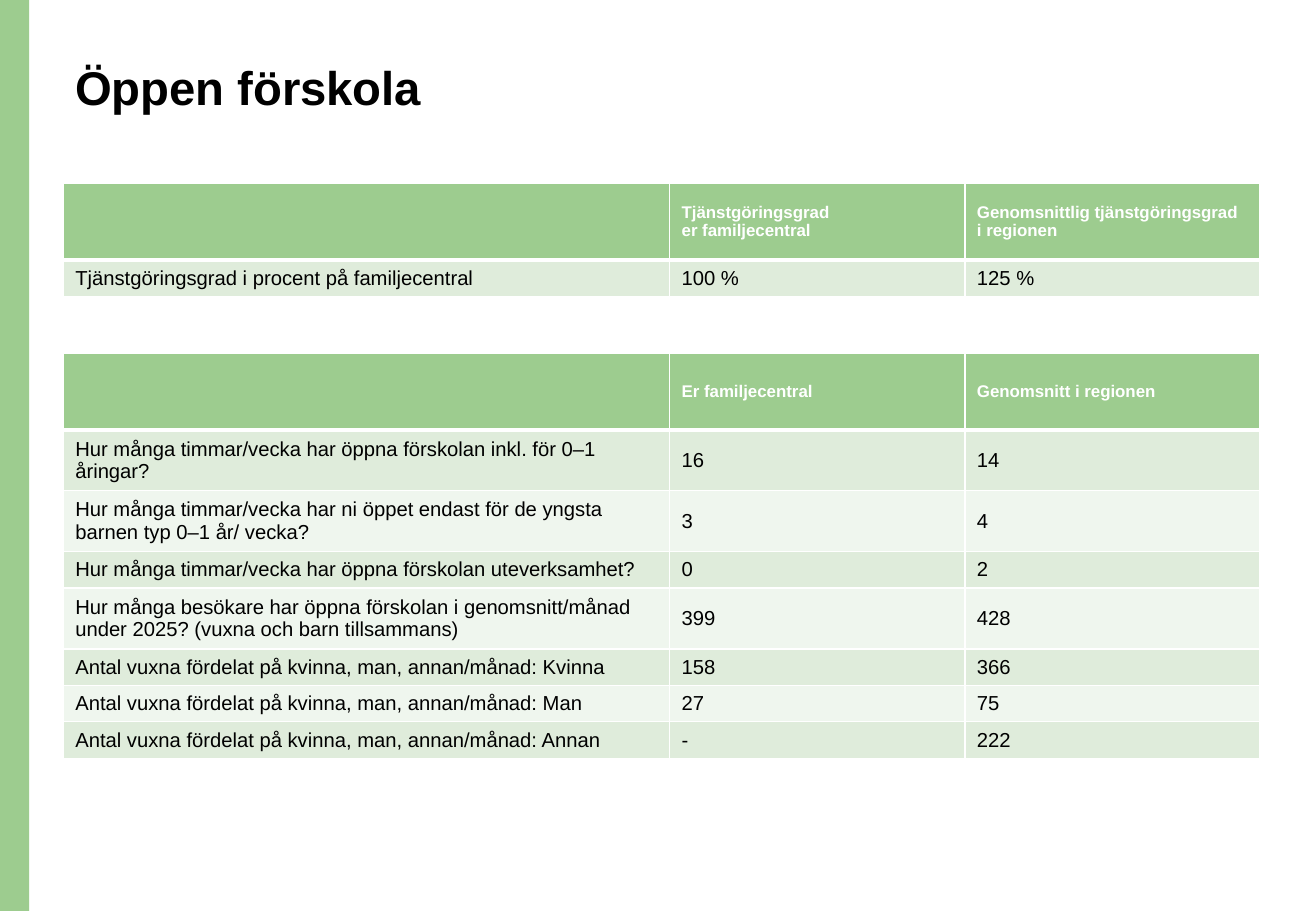
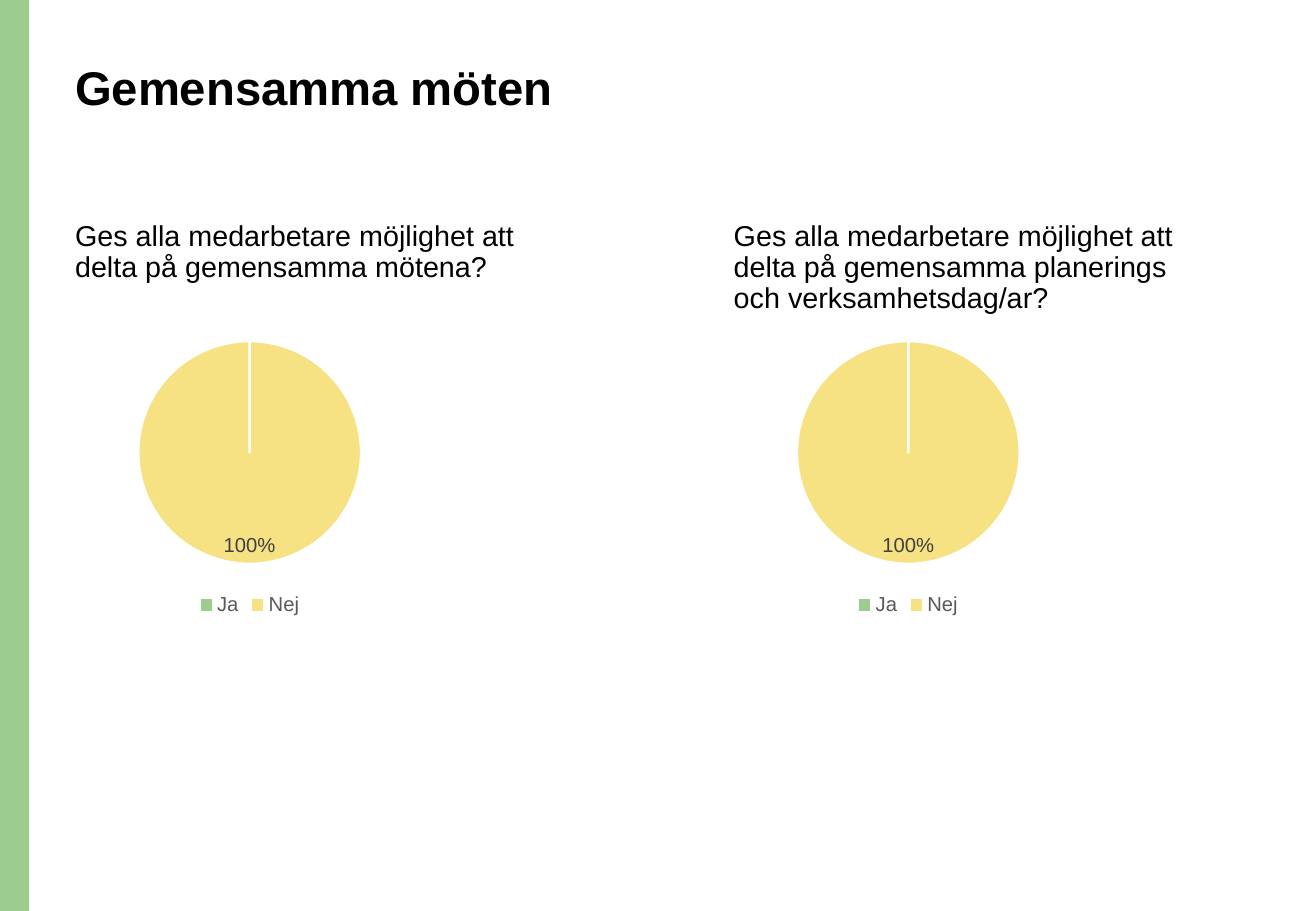
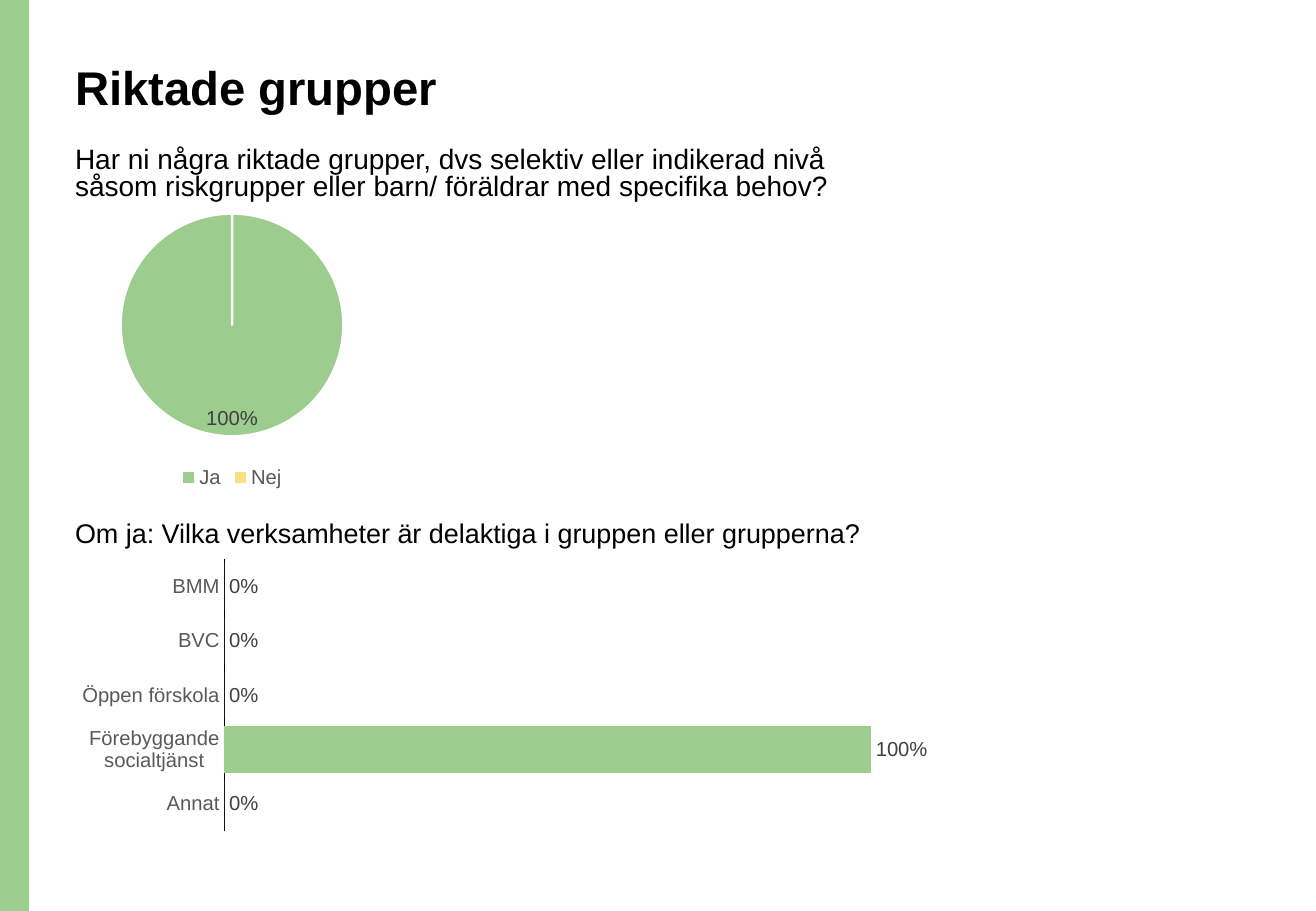
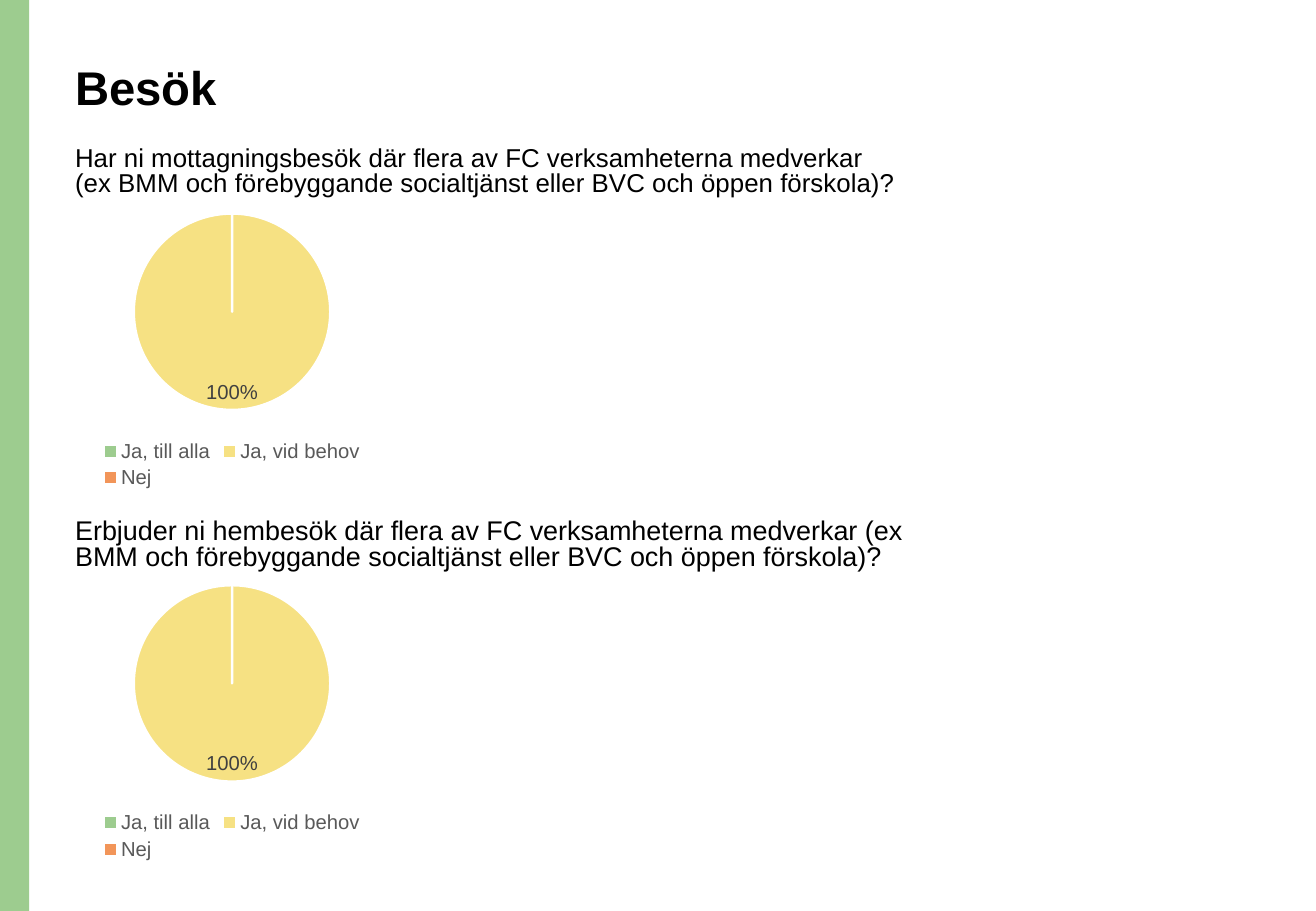
from pptx import Presentation
from pptx.chart.data import CategoryChartData
from pptx.dml.color import RGBColor
from pptx.enum.chart import XL_CHART_TYPE, XL_LABEL_POSITION, XL_LEGEND_POSITION, XL_TICK_MARK
from pptx.enum.shapes import MSO_SHAPE
from pptx.enum.text import MSO_ANCHOR
from pptx.oxml.xmlchemy import OxmlElement
from pptx.util import Inches, Pt

PIE, BAR = XL_CHART_TYPE.PIE, XL_CHART_TYPE.BAR_CLUSTERED
INSIDE_END, OUTSIDE_END = XL_LABEL_POSITION.INSIDE_END, XL_LABEL_POSITION.OUTSIDE_END
BOTTOM = XL_LEGEND_POSITION.BOTTOM
NO_TICK = XL_TICK_MARK.NONE
RECTANGLE = MSO_SHAPE.RECTANGLE
MIDDLE = MSO_ANCHOR.MIDDLE

FONT = "Arial"
COLORS = {
    "green": "9DCC8F", "yellow": "F6E183", "orange": "F29559",
    "band_dark": "DFECDB", "band_light": "EFF6EE",
    "white": "FFFFFF", "text": "000000", "label": "404040", "legend": "595959",
}
ANSWER_COLORS = ("green", "yellow", "orange")

# The slide is a grid of 100 columns by 100 rows.
WIDTH, HEIGHT = Inches(10.83), Inches(7.5)
LEFT = 4.8
UPPER, LOWER = 15.6, 56.4
CHART_DROP = 6
PIE_SIZE = (25.67, 32.53)
TABLE_COLUMNS = (46.08, 22.44, 22.44)
HEADER_ROW, BODY_ROW = 8.4, 3.07


def rgb(color):
    return RGBColor.from_string(COLORS[color])


def across(columns):
    return round(WIDTH * columns / 100)


def down(rows):
    return round(HEIGHT * rows / 100)


def area(left, top, width, height):
    return across(left), down(top), across(width), down(height)


def style_font(font, size, color="text", bold=False):
    font.name, font.size, font.bold = FONT, Pt(size), bold
    font.color.rgb = rgb(color)


def add_cell_borders(cell, **widths):
    """Draw white borders; the widths are points for the sides L, R, T and B."""
    properties = cell._tc.get_or_add_tcPr()
    for side, width in widths.items():
        line = OxmlElement(f"a:ln{side}")
        line.set("w", str(Pt(width)))
        fill = OxmlElement("a:solidFill")
        color = OxmlElement("a:srgbClr")
        color.set("val", COLORS["white"])
        fill.append(color)
        line.append(fill)
        properties.append(line)


class Report:
    def __init__(self):
        self.deck = Presentation()
        self.deck.slide_width, self.deck.slide_height = WIDTH, HEIGHT
        self.slide = None

    def start_slide(self, title):
        self.slide = self.deck.slides.add_slide(self.deck.slide_layouts[6])
        band = self.slide.shapes.add_shape(RECTANGLE, *area(0, 0, 2.22, 100))
        band.shadow.inherit = False
        band.fill.solid()
        band.fill.fore_color.rgb = rgb("green")
        band.line.fill.background()
        self.add_text(title, (LEFT, 6.4, 86.24, 13.6), 28, bold=True)

    def add_text(self, text, place, size, spacing=0.9, bold=False):
        frame = self.slide.shapes.add_textbox(*area(*place)).text_frame
        frame.word_wrap = True
        paragraph = frame.paragraphs[0]
        paragraph.text = text
        paragraph.line_spacing = spacing
        style_font(paragraph.font, size, bold=bold)

    def add_table(self, top, rows):
        height = HEADER_ROW + BODY_ROW * (len(rows) - 1)
        table = self.slide.shapes.add_table(
            len(rows), len(TABLE_COLUMNS), *area(LEFT, top, sum(TABLE_COLUMNS), height)).table
        for column, width in zip(table.columns, TABLE_COLUMNS):
            column.width = across(width)
        for r, texts in enumerate(rows):
            table.rows[r].height = down(BODY_ROW if r else HEADER_ROW)
            for c, text in enumerate(texts):
                self.fill_cell(table.cell(r, c), text, r)

    def fill_cell(self, cell, text, row):
        header = row == 0
        add_cell_borders(cell, L=1, R=1, T=3 if row == 1 else 1, B=3 if header else 1)
        cell.fill.solid()
        band = "band_dark" if row % 2 else "band_light"
        cell.fill.fore_color.rgb = rgb("green" if header else band)
        cell.vertical_anchor = MIDDLE
        cell.text_frame.text = text
        for paragraph in cell.text_frame.paragraphs:
            if header:
                style_font(paragraph.font, 10, "white", bold=True)
            else:
                style_font(paragraph.font, 12)

    def add_chart(self, kind, place, answers, label_position):
        """Add a one-series chart of shares and return it with its plot."""
        data = CategoryChartData(number_format="0%")
        data.categories = list(answers)
        data.add_series("Series 1", list(answers.values()))
        chart = self.slide.shapes.add_chart(kind, *area(*place), data).chart
        chart.has_title = chart.has_legend = False
        style_font(chart.font, 10)
        plot = chart.plots[0]
        plot.has_data_labels = True
        labels = plot.data_labels
        labels.show_value = True
        labels.number_format, labels.number_format_is_linked = "0%", False
        labels.position = label_position
        style_font(labels.font, 12, "label")
        return chart, plot

    def add_pie(self, left, top, answers):
        chart, plot = self.add_chart(PIE, (left, top, *PIE_SIZE), answers, INSIDE_END)
        plot.vary_by_categories = True
        chart.has_legend = True
        chart.legend.position = BOTTOM
        chart.legend.include_in_layout = False
        style_font(chart.legend.font, 12, "legend")
        for i, color in enumerate(ANSWER_COLORS[:len(answers)]):
            slice_format = plot.series[0].points[i].format
            slice_format.fill.solid()
            slice_format.fill.fore_color.rgb = rgb(color)
            slice_format.line.color.rgb = rgb("white")
            slice_format.line.width = Pt(1.5)

    def add_bars(self, place, answers):
        chart, plot = self.add_chart(BAR, place, answers, OUTSIDE_END)
        plot.vary_by_categories = False
        plot.gap_width = 15
        bars = plot.series[0].format.fill
        bars.solid()
        bars.fore_color.rgb = rgb("green")
        categories, shares = chart.category_axis, chart.value_axis
        categories.reverse_order = True
        categories.major_tick_mark = categories.minor_tick_mark = NO_TICK
        categories.format.line.color.rgb = rgb("text")
        categories.format.line.width = Pt(0.75)
        style_font(categories.tick_labels.font, 12, "legend")
        shares.minimum_scale, shares.maximum_scale = 0, 1.2
        shares.has_major_gridlines = False
        shares.visible = False


def main():
    report = Report()

    report.start_slide("Öppen förskola")
    report.add_table(20.13, [
        ("", "Tjänstgöringsgrad\ner familjecentral",
         "Genomsnittlig tjänstgöringsgrad\ni regionen"),
        ("Tjänstgöringsgrad i procent på familjecentral", "100 %", "125 %"),
    ])
    adults = "Antal vuxna fördelat på kvinna, man, annan/månad: "
    report.add_table(38.8, [
        ("", "Er familjecentral", "Genomsnitt i regionen"),
        ("Hur många timmar/vecka har öppna förskolan inkl. för 0–1 åringar?", "16", "14"),
        ("Hur många timmar/vecka har ni öppet endast för de yngsta barnen typ 0–1 år/ vecka?",
         "3", "4"),
        ("Hur många timmar/vecka har öppna förskolan uteverksamhet?", "0", "2"),
        ("Hur många besökare har öppna förskolan i genomsnitt/månad under 2025? "
         "(vuxna och barn tillsammans)", "399", "428"),
        (adults + "Kvinna", "158", "366"),
        (adults + "Man", "27", "75"),
        (adults + "Annan", "-", "222"),
    ])

    report.start_slide("Gemensamma möten")
    for left, subject in ((LEFT, "mötena?"),
                          (54.85, "planerings och verksamhetsdag/ar?")):
        report.add_text("Ges alla medarbetare möjlighet att delta på gemensamma " + subject,
                        (left, 23.73, 36.2, 13.6), 17)
        report.add_pie(left + 1.34, 35.6, {"Ja": 0, "Nej": 1})

    report.start_slide("Riktade grupper")
    report.add_text("Har ni några riktade grupper, dvs selektiv eller indikerad nivå såsom "
                    "riskgrupper eller barn/ föräldrar med specifika behov?",
                    (LEFT, UPPER, 63.8, 7.6), 16.6, spacing=0.8)
    report.add_pie(LEFT, UPPER + CHART_DROP, {"Ja": 1, "Nej": 0})
    report.add_bars((LEFT, 60.8, 72.67, 31.07), {
        "BMM": 0, "BVC": 0, "Öppen förskola": 0, "Förebyggande socialtjänst": 1, "Annat": 0})
    report.add_text("Om ja: Vilka verksamheter är delaktiga i gruppen eller grupperna?",
                    (LEFT, LOWER, 75.07, 8.4), 16)

    report.start_slide("Besök")
    for top, width, size, opening in ((UPPER, 64.73, 15.3, "Har ni mottagningsbesök"),
                                      (LOWER, 69.16, 16, "Erbjuder ni hembesök")):
        report.add_text(opening + " där flera av FC verksamheterna medverkar (ex BMM och "
                        "förebyggande socialtjänst eller BVC och öppen förskola)?",
                        (LEFT, top, width, 7.6), size, spacing=0.8)
        report.add_pie(LEFT, top + CHART_DROP,
                       {"Ja, till alla": 0, "Ja, vid behov": 1, "Nej": 0})

    report.deck.save("out.pptx")


if __name__ == "__main__":
    main()
